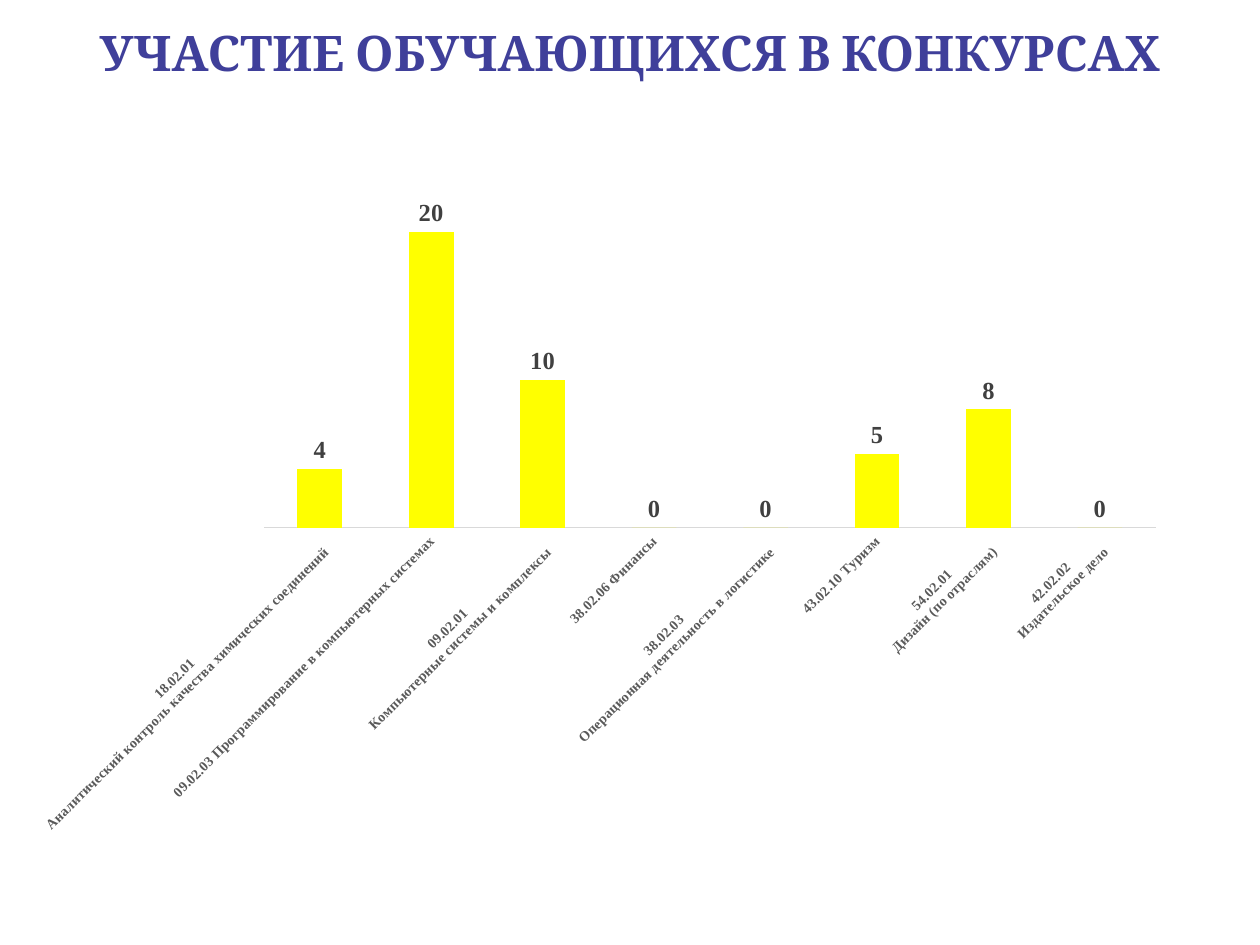
"""Build a slide with a column chart of student contest entries."""
from dataclasses import dataclass

from pptx import Presentation
from pptx import util as u
from pptx.chart import data as cd
from pptx.dml.color import RGBColor as Rgb
from pptx.enum import chart as ch, text as tx
from pptx.oxml.ns import qn


@dataclass(frozen=True)
class Theme:
    """Hold colours, fonts and type sizes."""
    head: str = "3F3F9A"
    bar: str = "FFFF00"
    value: str = "404040"
    label: str = "595959"
    axis: str = "D9D9D9"
    title: str = "Cambria"
    body: str = "Times New Roman"
    big: int = 28
    mid: int = 14
    small: int = 8


@dataclass(frozen=True)
class Box:
    """Hold a place in centimetres."""
    left: float
    top: float
    wide: float
    high: float

    def cm(self) -> list:
        """Return the place as lengths."""
        return [u.Cm(n) for n in (self.left, self.top, self.wide, self.high)]


@dataclass(frozen=True)
class Entry:
    """Hold one programme and its count."""
    name: str
    count: int


THEME = Theme()
ENTRIES = [
    Entry("18.02.01 \nАналитический контроль качества химических соединений", 4),
    Entry("09.02.03 Программирование в компьютерных системах", 20),
    Entry("09.02.01 \nКомпьютерные системы и комплексы", 10),
    Entry("38.02.06 Финансы", 0),
    Entry("38.02.03 \nОперационная деятельность в логистике", 0),
    Entry("43.02.10 Туризм", 5),
    Entry("54.02.01 \nДизайн (по отраслям)", 8),
    Entry("42.02.02 \nИздательское дело", 0),
]


def style(font, face: str, size: int, color: str) -> None:
    """Set a bold font."""
    font.name, font.size, font.bold = face, u.Pt(size), True
    font.color.rgb = Rgb.from_string(color)


def add_title(slide, box: Box, words: str) -> None:
    """Add the centred heading."""
    frame = slide.shapes.add_textbox(*box.cm()).text_frame
    frame.word_wrap = True
    frame.vertical_anchor = tx.MSO_ANCHOR.TOP
    frame.text = words
    para = frame.paragraphs[0]
    para.alignment = tx.PP_ALIGN.CENTER
    style(para.runs[0].font, THEME.title, THEME.big, THEME.head)


def add_bars(slide, box: Box, rows: list[Entry]) -> None:
    """Add the column chart."""
    data = cd.CategoryChartData()
    data.categories = [row.name for row in rows]
    data.add_series("Series 1", [row.count for row in rows])
    kind = ch.XL_CHART_TYPE.COLUMN_CLUSTERED
    chart = slide.shapes.add_chart(kind, *box.cm(), data).chart
    chart.has_legend = chart.has_title = False
    style(chart.font, THEME.body, THEME.mid, "000000")

    scale = chart.value_axis
    scale.visible = scale.has_major_gridlines = False
    scale.minimum_scale, scale.maximum_scale = 0, 25

    axis = chart.category_axis
    axis.major_tick_mark = axis.minor_tick_mark = ch.XL_TICK_MARK.NONE
    axis.format.line.width = u.Pt(0.75)
    axis.format.line.color.rgb = Rgb.from_string(THEME.axis)
    style(axis.tick_labels.font, THEME.body, THEME.small, THEME.label)
    axis._element.find(qn("c:txPr")).find(qn("a:bodyPr")).set("rot", "-2700000")

    plot = chart.plots[0]
    plot.gap_width, plot.overlap = 150, -25
    plot.vary_by_categories = False
    bars = plot.series[0]
    bars.invert_if_negative = False
    bars.format.fill.solid()
    bars.format.fill.fore_color.rgb = Rgb.from_string(THEME.bar)
    bars.format.line.fill.background()
    plot.has_data_labels = True
    tags = plot.data_labels
    tags.show_value = True
    tags.position = ch.XL_LABEL_POSITION.OUTSIDE_END
    style(tags.font, THEME.body, THEME.mid, THEME.value)


def main() -> None:
    """Build and save the slide."""
    deck = Presentation()
    deck.slide_width, deck.slide_height = u.Cm(25.4), u.Cm(19.05)
    slide = deck.slides.add_slide(deck.slide_layouts[6])
    add_title(slide, Box(1.27, 0.33, 22.86, 3.18), "УЧАСТИЕ ОБУЧАЮЩИХСЯ В КОНКУРСАХ")
    add_bars(slide, Box(0.15, 2.9, 23.62, 14.17), ENTRIES)
    deck.save("out.pptx")


if __name__ == "__main__":
    main()
